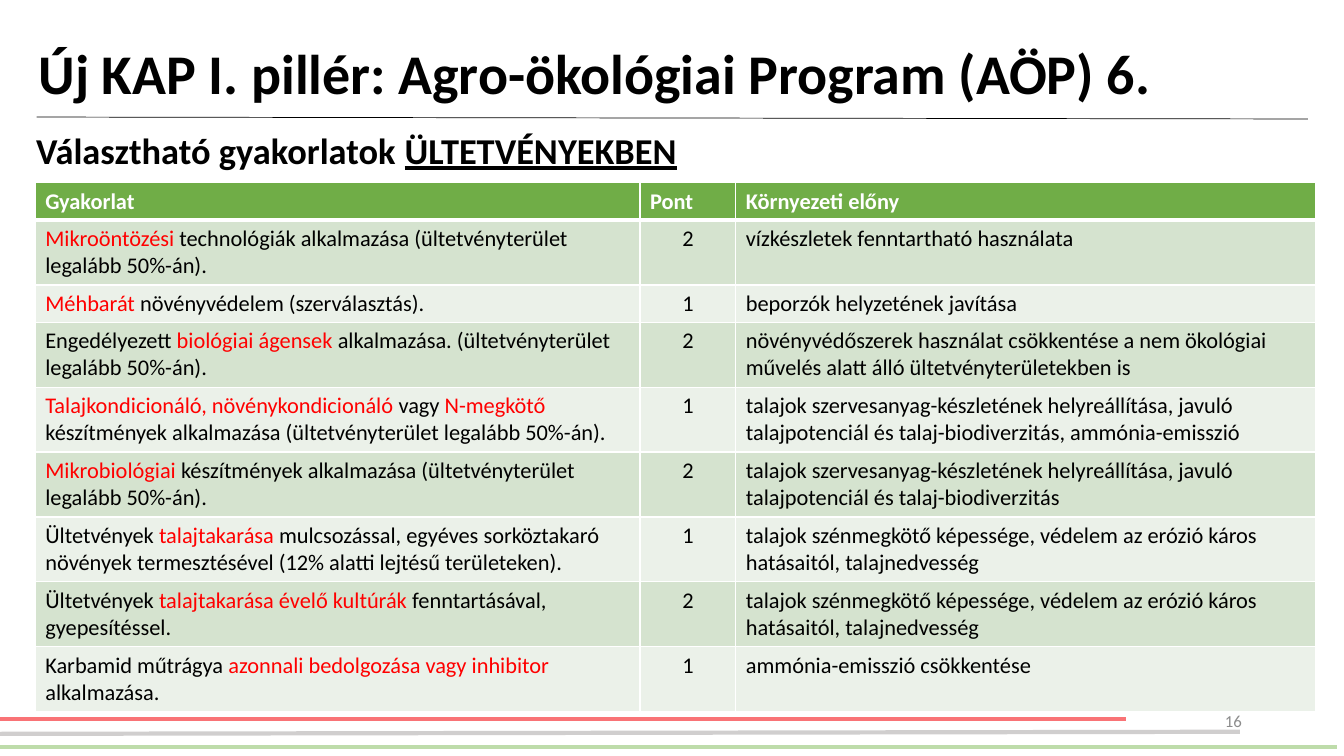
from lxml.etree import SubElement
from pptx import Presentation
from pptx.dml.color import RGBColor
from pptx.enum.text import MSO_ANCHOR, MSO_AUTO_SIZE, PP_ALIGN
from pptx.enum.shapes import MSO_CONNECTOR
from pptx.oxml.ns import qn
from pptx.util import Pt

HEADINGS = ("Gyakorlat", "Pont", "Környezeti előny")
COLUMN_WIDTHS = (432, 68.4, 414)
ONE_LINE, TWO_LINES = 26.6, 46.4
PRACTICES = [
    ("*Mikroöntözési *technológiák alkalmazása (ültetvényterület legalább 50%-án).", "2",
     "vízkészletek fenntartható használata", TWO_LINES),
    ("*Méhbarát *növényvédelem (szerválasztás).", "1",
     "beporzók helyzetének javítása", ONE_LINE),
    ("Engedélyezett *biológiai ágensek *alkalmazása. (ültetvényterület legalább 50%-án).", "2",
     "növényvédőszerek használat csökkentése a nem ökológiai művelés alatt álló "
     "ültetvényterületekben is", TWO_LINES),
    ("*Talajkondicionáló, növénykondicionáló *vagy *N-megkötő* készítmények alkalmazása "
     "(ültetvényterület legalább 50%-án).", "1",
     "talajok szervesanyag-készletének helyreállítása, javuló talajpotenciál és "
     "talaj-biodiverzitás, ammónia-emisszió", TWO_LINES),
    ("*Mikrobiológiai* készítmények alkalmazása (ültetvényterület legalább 50%-án).", "2",
     "talajok szervesanyag-készletének helyreállítása, javuló talajpotenciál és "
     "talaj-biodiverzitás", TWO_LINES),
    ("Ültetvények *talajtakarása *mulcsozással, egyéves sorköztakaró növények termesztésével "
     "(12% alatti lejtésű területeken).", "1",
     "talajok szénmegkötő képessége, védelem az erózió káros hatásaitól, talajnedvesség",
     TWO_LINES),
    ("Ültetvények *talajtakarása évelő kultúrák *fenntartásával, gyepesítéssel.", "2",
     "talajok szénmegkötő képessége, védelem az erózió káros hatásaitól, talajnedvesség",
     TWO_LINES),
    ("Karbamid műtrágya *azonnali bedolgozása vagy inhibitor *alkalmazása.", "1",
     "ammónia-emisszió csökkentése", TWO_LINES),
]


def rgb(value):
    """Turn a hex string into a colour."""
    return RGBColor.from_string(value)


def write(frame, text, size=16, color="000000", accent=None, bold=False,
          underline_accent=False, align=PP_ALIGN.LEFT, spacing=None):
    """Fill a text frame; parts between asterisks are accented."""
    paragraph = frame.paragraphs[0]
    paragraph.alignment = align
    if spacing:
        paragraph.line_spacing = spacing
    for index, part in enumerate(text.split("*")):
        if not part:
            continue
        accented = index % 2 == 1
        run = paragraph.add_run()
        run.text = part
        run.font.name = "Calibri"
        run.font.size = Pt(size)
        run.font.bold = bold
        run.font.color.rgb = rgb(accent if accented and accent else color)
        if accented and underline_accent:
            run.font.underline = True


def add_rule(slide, start, end, color, width):
    """Draw a straight line between two points."""
    rule = slide.shapes.add_connector(
        MSO_CONNECTOR.STRAIGHT, *(Pt(value) for value in start + end))
    rule.line.color.rgb = rgb(color)
    rule.line.width = Pt(width)
    SubElement(rule._element.spPr, qn("a:effectLst"))


def add_label(slide, box, text, anchor=MSO_ANCHOR.TOP, **text_format):
    """Place a wrapped text box."""
    frame = slide.shapes.add_textbox(*(Pt(value) for value in box)).text_frame
    frame.word_wrap = True
    frame.vertical_anchor = anchor
    write(frame, text, **text_format)


def add_heading(slide, left, top, width, height):
    """Place the title, the rule under it and the subtitle."""
    title = slide.shapes.title
    title.left, title.top, title.width, title.height = (
        Pt(value) for value in (left, top, width, height))
    frame = title.text_frame
    frame.auto_size = MSO_AUTO_SIZE.NONE
    frame.word_wrap = True
    frame.vertical_anchor = MSO_ANCHOR.MIDDLE
    frame.margin_left = Pt(15.4)
    write(frame, "Új KAP I. pillér: Agro-ökológiai Program (AÖP) 6.",
          size=40, bold=True, spacing=0.9)
    add_rule(slide, (left + 13.9, top + 81.4), (left + 922, top + 82.8), "000000", 0.5)
    add_label(slide, (left + 6.5, top + 85.8, 593.3, 38.9),
              "Választható gyakorlatok *ÜLTETVÉNYEKBEN*",
              size=26, bold=True, underline_accent=True)


def style_cell(cell, fill, bottom_width):
    """Give a cell white borders and a plain fill."""
    properties = cell._tc.get_or_add_tcPr()
    for side, width in (("L", 1), ("R", 1), ("T", 1), ("B", bottom_width)):
        border = SubElement(properties, qn(f"a:ln{side}"), w=str(Pt(width)))
        SubElement(SubElement(border, qn("a:solidFill")), qn("a:srgbClr"), val="FFFFFF")
    cell.fill.solid()
    cell.fill.fore_color.rgb = rgb(fill)


def add_practices(slide, left, top):
    """Place the table of practices, points and benefits."""
    heights = [ONE_LINE] + [practice[3] for practice in PRACTICES]
    table = slide.shapes.add_table(
        len(heights), len(HEADINGS), Pt(left), Pt(top),
        Pt(sum(COLUMN_WIDTHS)), Pt(sum(heights))).table
    table.horz_banding = False
    for column, width in zip(table.columns, COLUMN_WIDTHS):
        column.width = Pt(width)
    for row, height in zip(table.rows, heights):
        row.height = Pt(height)
    for column, heading in enumerate(HEADINGS):
        cell = table.cell(0, column)
        style_cell(cell, "70AD47", 3)
        write(cell.text_frame, heading, color="FFFFFF", bold=True)
    for row, practice in enumerate(PRACTICES, 1):
        for column, text in enumerate(practice[:3]):
            cell = table.cell(row, column)
            style_cell(cell, "D5E3CF" if row % 2 else "EBF1E9", 1)
            write(cell.text_frame, text, accent="FF0000",
                  align=PP_ALIGN.CENTER if column == 1 else PP_ALIGN.LEFT)


def add_footer(slide, left, top):
    """Place the coloured stripes and the page number."""
    for start_y, end_y, length, color in (
            (13, 13, 804.2, "F97376"), (33.2, 33.2, 954.7, "BEDCAA"),
            (23.8, 22.3, 885.6, "D0CECE")):
        add_rule(slide, (left, top + start_y), (left + length, top + end_y), color, 3)
    add_label(slide, (left + 678.2, top, 216, 28.8), "16", anchor=MSO_ANCHOR.MIDDLE,
              size=12, color="8C8C8C", align=PP_ALIGN.RIGHT)


def main():
    """Build and save the slide."""
    presentation = Presentation()
    presentation.slide_width, presentation.slide_height = Pt(960), Pt(540)
    slide = presentation.slides.add_slide(presentation.slide_layouts[5])
    add_footer(slide, 0, 500.4)
    add_heading(slide, 12.2, 2.2, 927.4, 104.4)
    add_practices(slide, 25.2, 130.6)
    presentation.save("out.pptx")


if __name__ == "__main__":
    main()
